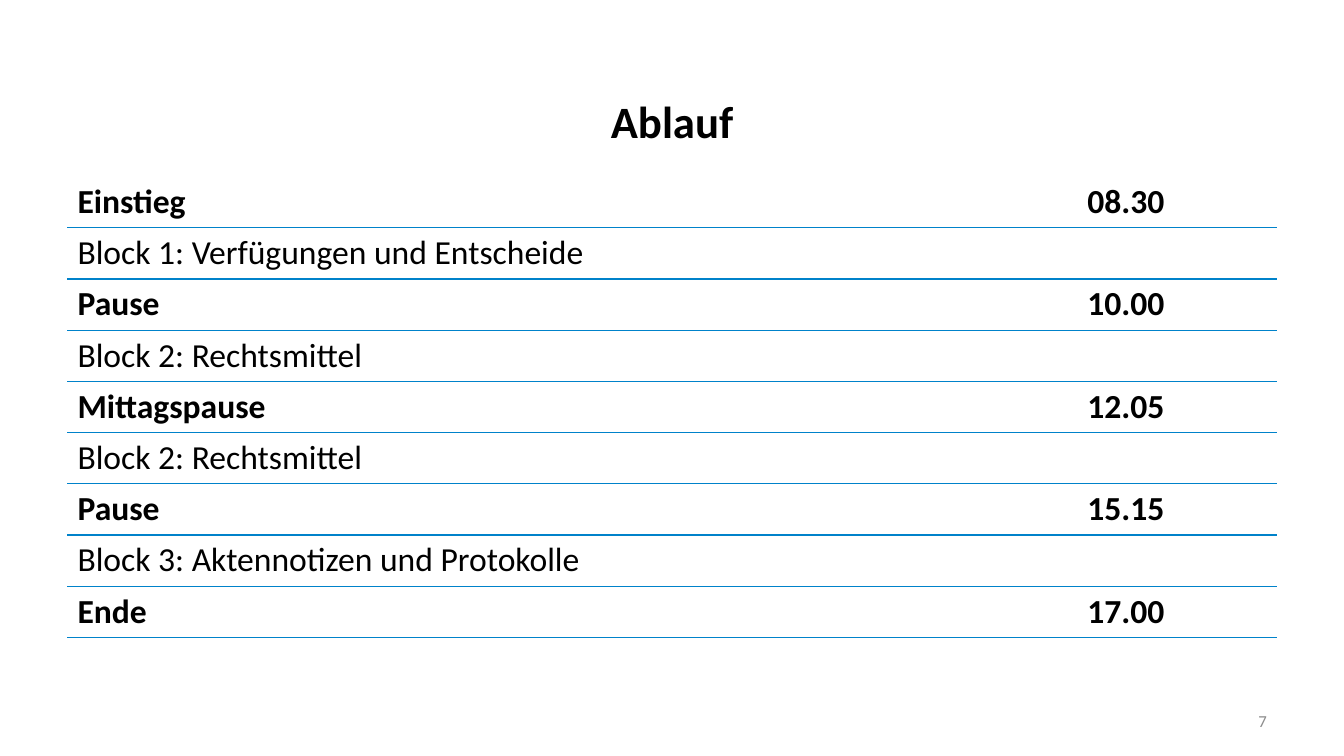
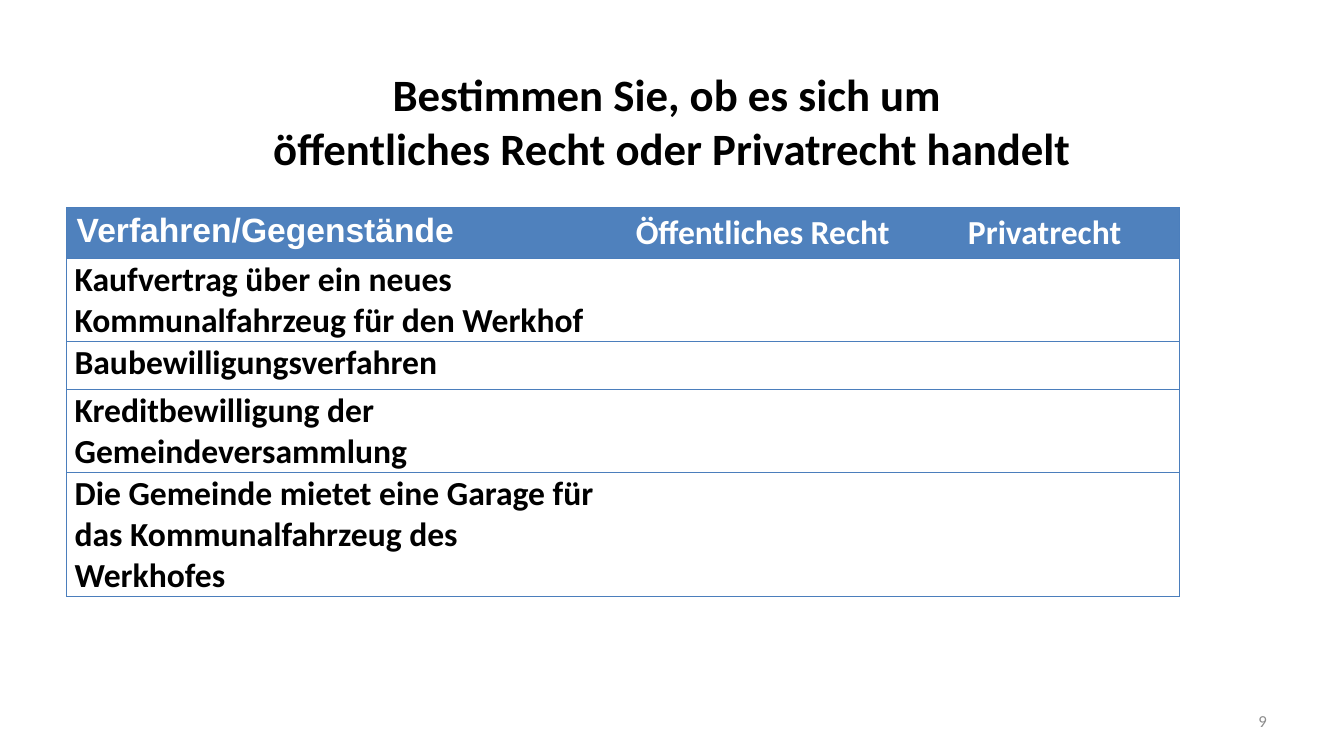
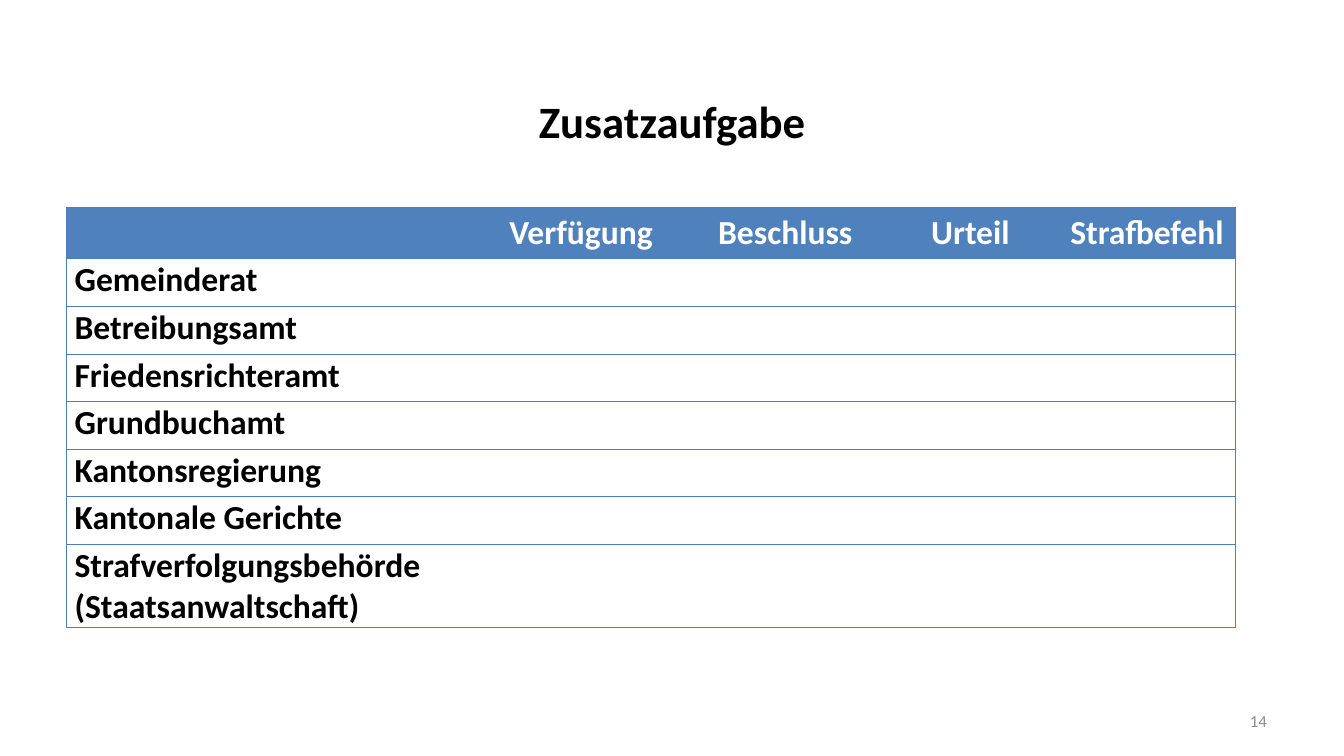
"""Three course slides: a day plan and two tables to fill in."""
from lxml import etree
from pptx import Presentation
from pptx.dml.color import RGBColor
from pptx.enum.text import MSO_ANCHOR, PP_ALIGN
from pptx.oxml.ns import qn
from pptx.util import Cm, Pt

LEFT, MID, RIGHT = PP_ALIGN.LEFT, PP_ALIGN.CENTER, PP_ALIGN.RIGHT
CENTRE = MSO_ANCHOR.MIDDLE
FONT = "Calibri"
HUES = {"text": "000000", "head": "FFFFFF", "fill": "4F81BD",
        "grid": "4B7EBC", "plan": "0082CA", "page": "8C8C8C"}
TALL, ROW, TWO, THREE = 1.29, 1.2, 2.09, 3.12


def style(frame, size, hue, bold, align, face=FONT):
    for para in frame.paragraphs:
        para.alignment = align
        for run in para.runs:
            run.font.size = Pt(size)
            run.font.name = face
            run.font.bold = bold
            run.font.color.rgb = RGBColor.from_string(HUES[hue])


def border(cell, sides, hue, width):
    props = cell._tc.get_or_add_tcPr()
    for side in "LRTB":
        line = etree.SubElement(props, qn(f"a:ln{side}"), w=str(Pt(width)))
        if side in sides:
            fill = etree.SubElement(line, qn("a:solidFill"))
            etree.SubElement(fill, qn("a:srgbClr"), val=HUES[hue])
        else:
            etree.SubElement(line, qn("a:noFill"))


PLAN = [
    ["Einstieg", "08.30"],
    ["Block 1: Verfügungen und Entscheide", ""],
    ["Pause", "10.00"],
    ["Block 2: Rechtsmittel", ""],
    ["Mittagspause", "12.05"],
    ["Block 2: Rechtsmittel", ""],
    ["Pause", "15.15"],
    ["Block 3: Aktennotizen und Protokolle", ""],
    ["Ende", "17.00"],
]
LAW = [
    ["Verfahren/Gegenstände", "Öffentliches Recht", "Privatrecht"],
    ["Kaufvertrag über ein neues Kommunalfahrzeug für den Werkhof"],
    ["Baubewilligungsverfahren"],
    ["Kreditbewilligung der Gemeindeversammlung"],
    ["Die Gemeinde mietet eine Garage für das Kommunalfahrzeug des Werkhofes"],
]
TASK = [
    ["", "Verfügung", "Beschluss", "Urteil", "Strafbefehl"],
    ["Gemeinderat"],
    ["Betreibungsamt"],
    ["Friedensrichteramt"],
    ["Grundbuchamt"],
    ["Kantonsregierung"],
    ["Kantonale Gerichte"],
    ["Strafverfolgungsbehörde\n(Staatsanwaltschaft)"],
]
SLIDES = [
    ("Ablauf", "7", PLAN, 1.7, 4.45, [25.45, 5.03], [TALL] * 9),
    ("Bestimmen Sie, ob es sich um \vöffentliches Recht oder Privatrecht handelt",
     "9", LAW, 1.68, 5.23, [13.84, 7.4, 6.81], [TALL, TWO, ROW, TWO, THREE]),
    ("Zusatzaufgabe", "14", TASK, 1.68, 5.23,
     [10.26, 5.41, 4.88, 4.45, 4.45], [TALL] + [ROW] * 6 + [TWO]),
]

deck = Presentation()
deck.slide_width, deck.slide_height = Cm(33.87), Cm(19.05)

for title, page, rows, left, top, wides, highs in SLIDES:
    slide = deck.slides.add_slide(deck.slide_layouts[6])
    labels = [(title, 1.7, 2.13, 30.48, 1.8, 32, "text", True, MID),
              (page, 24.28, 17.65, 7.9, 1.02, 12, "page", False, RIGHT)]
    for text, x, y, wide, high, size, hue, bold, align in labels:
        frame = slide.shapes.add_textbox(Cm(x), Cm(y), Cm(wide), Cm(high)).text_frame
        frame.word_wrap = True
        frame.vertical_anchor = CENTRE
        frame.text = text
        style(frame, size, hue, bold, align)

    plan = rows is PLAN
    table = slide.shapes.add_table(len(rows), len(wides), Cm(left), Cm(top),
                                   Cm(sum(wides)), Cm(sum(highs))).table
    table.first_row = not plan
    table.horz_banding = False
    for col, wide in zip(table.columns, wides):
        col.width = Cm(wide)
    for row, high in zip(table.rows, highs):
        row.height = Cm(high)

    for r, row in enumerate(rows):
        for c in range(len(wides)):
            cell = table.cell(r, c)
            head = r == 0 and not plan
            if plan:
                border(cell, "TB" if r else "B", "plan", 1)
            else:
                sides = "TB" + "L" * (c == 0) + "R" * (c == len(wides) - 1)
                border(cell, sides, "grid", 0.75)
            if head:
                cell.fill.solid()
                cell.fill.fore_color.rgb = RGBColor.from_string(HUES["fill"])
            else:
                cell.fill.background()
            if c >= len(row) or not row[c]:
                continue
            cell.text_frame.text = row[c]
            if not plan and not head:
                cell.margin_left = cell.margin_right = Cm(0.2)
                cell.margin_top, cell.margin_bottom = Cm(0.03), Cm(0)
            style(cell.text_frame, 24, "head" if head else "text",
                  not plan or r % 2 == 0, MID if head and c else LEFT,
                  "Arial" if head and c == 0 else FONT)

deck.save("out.pptx")
